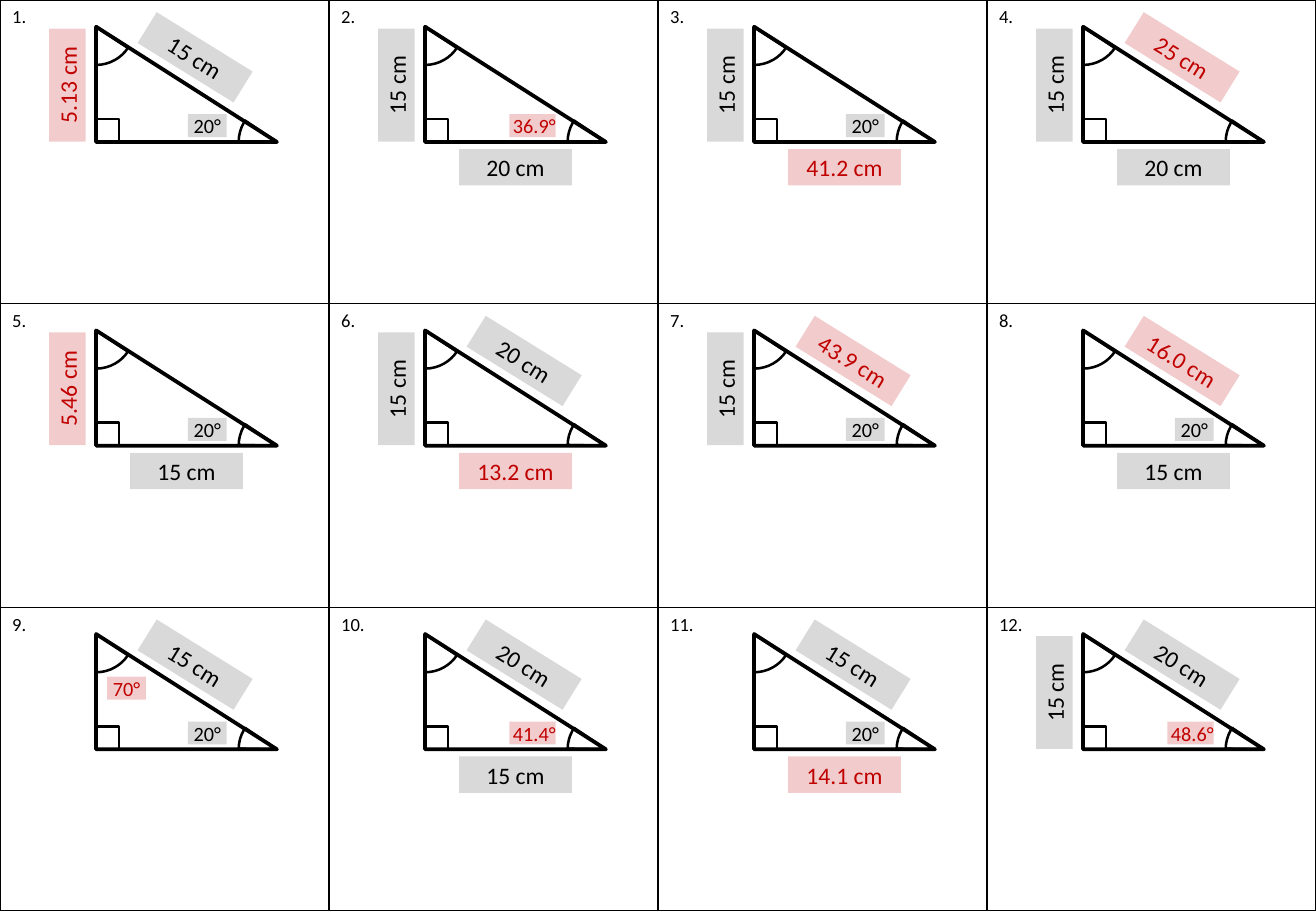
from lxml.etree import SubElement
from pptx import Presentation
from pptx.dml.color import RGBColor
from pptx.enum.shapes import MSO_SHAPE
from pptx.enum.text import MSO_ANCHOR, PP_ALIGN
from pptx.oxml import parse_xml
from pptx.oxml.ns import nsdecls, qn
from pptx.util import Cm, Pt

# Page grid, in cm
PAGE_W, PAGE_H = 27.51, 19.05
COLUMNS, ROWS = 4, 3
CELL_W, CELL_H = PAGE_W / COLUMNS, PAGE_H / ROWS

# Triangle geometry, in cm; places are label centres from its top left corner
BASE, HEIGHT = 3.78, 2.41
SQUARE, ARC = 0.48, 1.6
SIDES = {
    "hypotenuse": (2.07, 0.64, 31.8),
    "upright": (-0.6, 1.22, 270),
    "base": (1.89, 2.94, 0),
}
ANGLE_RIGHT, ANGLE_MIDDLE = 2.73, 2.07
TOP_ANGLE_RIGHT, TOP_ANGLE_MIDDLE = 1.04, 1.13

# Each problem: its labels, then which of them is the answer
PROBLEMS = [
    ({"hypotenuse": "15 cm", "upright": "5.13 cm", "angle": "20°"}, "upright"),
    ({"base": "20 cm", "upright": "15 cm", "angle": "36.9°"}, "angle"),
    ({"base": "41.2 cm", "upright": "15 cm", "angle": "20°"}, "base"),
    ({"base": "20 cm", "hypotenuse": "25 cm", "upright": "15 cm"}, "hypotenuse"),
    ({"base": "15 cm", "upright": "5.46 cm", "angle": "20°"}, "upright"),
    ({"base": "13.2 cm", "hypotenuse": "20 cm", "upright": "15 cm"}, "base"),
    ({"hypotenuse": "43.9 cm", "upright": "15 cm", "angle": "20°"}, "hypotenuse"),
    ({"base": "15 cm", "hypotenuse": "16.0 cm", "angle": "20°"}, "hypotenuse"),
    ({"hypotenuse": "15 cm", "angle": "20°", "top angle": "70°"}, "top angle"),
    ({"base": "15 cm", "hypotenuse": "20 cm", "angle": "41.4°"}, "angle"),
    ({"base": "14.1 cm", "hypotenuse": "15 cm", "angle": "20°"}, "base"),
    ({"hypotenuse": "20 cm", "upright": "15 cm", "angle": "48.6°"}, "angle"),
]


def colour(code):
    return RGBColor.from_string(code)


class Worksheet:
    font = "Calibri"
    ink, given, answer = "000000", "D9D9D9", "C00000"

    def __init__(self, slide):
        self.slide = slide

    def set_text(self, paragraph, text, size, ink):
        paragraph.text = text
        font = paragraph.runs[0].font
        font.name, font.size = self.font, Pt(size)
        font.color.rgb = colour(ink)

    def grid(self):
        table = self.slide.shapes.add_table(
            ROWS, COLUMNS, 0, 0, Cm(PAGE_W), Cm(PAGE_H)).table
        table.first_row = table.horz_banding = False
        for number, cell in enumerate(table.iter_cells(), 1):
            self.set_text(cell.text_frame.paragraphs[0], f"{number}.", 11, self.ink)
            cell.fill.background()
            for place, edge in enumerate(("lnL", "lnR", "lnT", "lnB")):
                cell._tc.tcPr.insert(place, parse_xml(
                    f'<a:{edge} {nsdecls("a")} w="12700"><a:solidFill>'
                    f'<a:srgbClr val="{self.ink}"/></a:solidFill></a:{edge}>'))

    def outline(self, kind, left, top, width, height, weight, adjustments=()):
        shape = self.slide.shapes.add_shape(
            kind, Cm(left), Cm(top), Cm(width), Cm(height))
        shape.shadow.inherit = False
        shape.fill.background()
        shape.line.color.rgb = colour(self.ink)
        shape.line.width = Pt(weight)
        for place, value in enumerate(adjustments):
            shape.adjustments[place] = value

    def triangle(self, left, top):
        bottom = top + HEIGHT
        self.outline(MSO_SHAPE.RIGHT_TRIANGLE, left, top, BASE, HEIGHT, 2.25)
        self.outline(MSO_SHAPE.RECTANGLE, left, bottom - SQUARE, SQUARE, SQUARE, 1.5)
        for x, y, arc in ((left + BASE, bottom, (108.574, 128.349)),
                          (left, top, (20.209, 53.518))):
            self.outline(MSO_SHAPE.PIE, x - ARC / 2, y - ARC / 2, ARC, ARC, 1.5, arc)

    def label(self, text, x, y, width, height, size, is_answer,
              rotation=0, align=PP_ALIGN.CENTER):
        box = self.slide.shapes.add_shape(
            MSO_SHAPE.RECTANGLE, Cm(x - width / 2), Cm(y - height / 2),
            Cm(width), Cm(height))
        box.rotation = rotation
        box.shadow.inherit = False
        box.line.fill.background()
        box.fill.solid()
        box.fill.fore_color.rgb = colour(self.answer if is_answer else self.given)
        if is_answer:
            tint = box._element.spPr.find(qn("a:solidFill"))[0]
            SubElement(tint, qn("a:alpha")).set("val", "20000")
        frame = box.text_frame
        frame.margin_left = frame.margin_right = 0
        frame.vertical_anchor = MSO_ANCHOR.MIDDLE
        paragraph = frame.paragraphs[0]
        self.set_text(paragraph, text, size, self.answer if is_answer else self.ink)
        paragraph.alignment = align

    def side(self, name, text, left, top, is_answer):
        x, y, rotation = SIDES[name]
        self.label(text, left + x, top + y, 2.36, 0.76, 14, is_answer, rotation)

    def angle(self, name, text, left, top, is_answer):
        right, middle = ((TOP_ANGLE_RIGHT, TOP_ANGLE_MIDDLE) if name == "top angle"
                         else (ANGLE_RIGHT, ANGLE_MIDDLE))
        decimal = "." in text
        width = 0.97 if decimal else 0.81
        self.label(text, left + right - width / 2, top + middle, width, 0.48, 12,
                   is_answer, align=PP_ALIGN.RIGHT if decimal else PP_ALIGN.CENTER)


def main():
    deck = Presentation()
    deck.slide_width, deck.slide_height = Cm(PAGE_W), Cm(PAGE_H)
    sheet = Worksheet(deck.slides.add_slide(deck.slide_layouts[6]))

    # Numbered cells
    sheet.grid()

    # One labelled triangle per cell
    for index, (labels, answer) in enumerate(PROBLEMS):
        row, column = divmod(index, COLUMNS)
        left, top = 2.01 + column * CELL_W, 0.56 + row * CELL_H
        sheet.triangle(left, top)
        for name, text in labels.items():
            draw = sheet.side if name in SIDES else sheet.angle
            draw(name, text, left, top, name == answer)

    deck.save("out.pptx")


if __name__ == "__main__":
    main()
